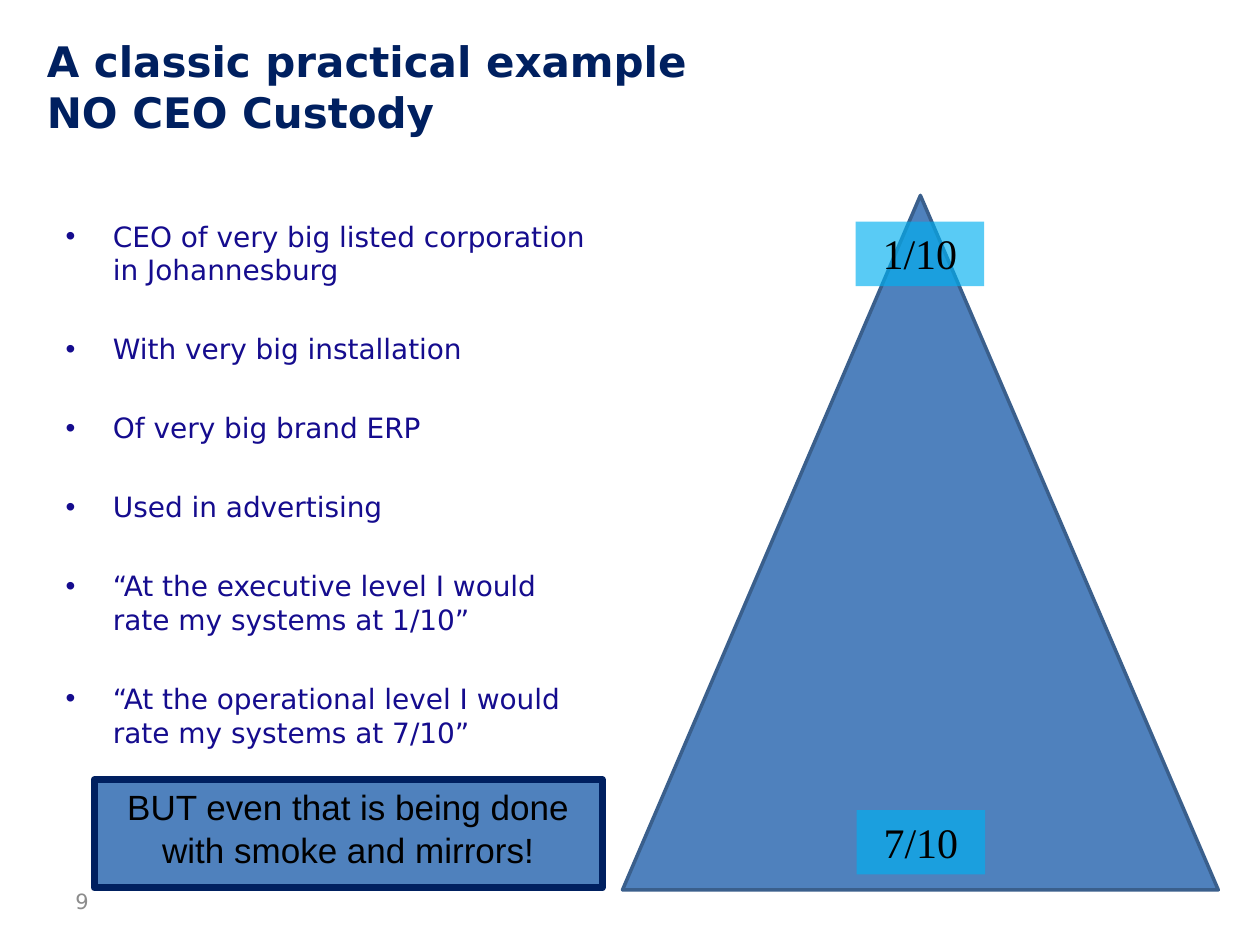
"""Build a slide on how a CEO and the operational level rate the same systems."""
from dataclasses import dataclass
from typing import Optional

import lxml.etree
import pptx
import pptx.dml.color
import pptx.enum.shapes
import pptx.enum.text
import pptx.oxml.ns
import pptx.util

Cm, Pt = pptx.util.Cm, pptx.util.Pt
SHAPE = pptx.enum.shapes.MSO_SHAPE
ANCHOR = pptx.enum.text.MSO_ANCHOR
ALIGN = pptx.enum.text.PP_ALIGN

COLORS = {
    "navy": "002060",
    "indigo": "150C8E",
    "grey": "8C8C8C",
    "blue": "4F81BD",
    "edge": "3A5F8C",
    "cyan": "00B0F0",
    "black": "000000",
}
BULLETS = [
    "CEO of very big listed corporation in Johannesburg",
    "With very big installation",
    "Of very big brand ERP",
    "Used in advertising",
    "“At the executive level I would rate my systems at 1/10”",
    "“At the operational level I would rate my systems at 7/10”",
]


@dataclass
class Box:
    left: float
    top: float
    width: float
    height: float


@dataclass
class Style:
    font: str
    size: float
    color: str
    bold: bool = False
    align: pptx.enum.text.PP_ALIGN = ALIGN.LEFT
    anchor: pptx.enum.text.MSO_ANCHOR = ANCHOR.TOP
    gap: float = 0


@dataclass
class Block:
    kind: pptx.enum.shapes.MSO_SHAPE
    box: Box
    fill: str
    line: Optional[str] = None
    line_width: float = 0
    opacity: int = 100
    text: str = ""
    style: Optional[Style] = None


RATING = Style("Times New Roman", 24, "black", align=ALIGN.CENTER)
CLAIM = Style("Arial", 20, "black", align=ALIGN.CENTER)
BLOCKS = [
    Block(SHAPE.ISOSCELES_TRIANGLE, Box(12.55, 3.94, 12.01, 14), "blue", "edge", 2),
    Block(SHAPE.RECTANGLE, Box(17.25, 4.47, 2.59, 1.3), "cyan",
          opacity=65, text="1/10", style=RATING),
    Block(SHAPE.RECTANGLE, Box(17.27, 16.33, 2.59, 1.3), "cyan",
          opacity=65, text="7/10", style=RATING),
    Block(SHAPE.RECTANGLE, Box(1.9, 15.72, 10.24, 2.18), "blue", "navy", 4,
          text="BUT even that is being done with smoke and mirrors!", style=CLAIM),
]


def rgb(name: str) -> pptx.dml.color.RGBColor:
    return pptx.dml.color.RGBColor.from_string(COLORS[name])


def place(sp, box: Box) -> None:
    sp.left, sp.top = Cm(box.left), Cm(box.top)
    sp.width, sp.height = Cm(box.width), Cm(box.height)


def write(sp, text: str, style: Style) -> None:
    tf = sp.text_frame
    tf.text = text
    tf.word_wrap = True
    tf.auto_size = pptx.enum.text.MSO_AUTO_SIZE.NONE
    tf.vertical_anchor = style.anchor
    for i, p in enumerate(tf.paragraphs):
        p.alignment = style.align
        p.space_before = Pt(style.gap if i else 0)
        for r in p.runs:
            r.font.name = style.font
            r.font.size = Pt(style.size)
            r.font.bold = style.bold
            r.font.color.rgb = rgb(style.color)


def draw(s, block: Block) -> None:
    sp = s.shapes.add_shape(block.kind, 0, 0, 0, 0)
    place(sp, block.box)
    sp.shadow.inherit = False
    sp.fill.solid()
    sp.fill.fore_color.rgb = rgb(block.fill)
    if block.opacity < 100:
        qn = pptx.oxml.ns.qn
        color = sp.fill._xPr.find(qn("a:solidFill")).find(qn("a:srgbClr"))
        lxml.etree.SubElement(color, qn("a:alpha"), val=str(block.opacity * 1000))
    if block.line:
        sp.line.color.rgb = rgb(block.line)
        sp.line.width = Pt(block.line_width)
    else:
        sp.line.fill.background()
    if block.style:
        write(sp, block.text, block.style)


def main() -> None:
    prs = pptx.Presentation()
    prs.slide_width, prs.slide_height = Cm(25.4), Cm(19.05)
    s = prs.slides.add_slide(prs.slide_layouts[1])

    title, body = s.shapes.title, s.placeholders[1]
    place(title, Box(0.69, 0.15, 22.86, 3.18))
    write(title, "A classic practical example\vNO CEO Custody",
          Style("DejaVu Sans", 24, "navy", bold=True, anchor=ANCHOR.MIDDLE))
    place(body, Box(1.07, 4.29, 11.25, 14.83))
    write(body, "\n".join(BULLETS), Style("DejaVu Sans", 16, "indigo", gap=26))

    number = s.shapes.add_textbox(0, 0, 0, 0)
    place(number, Box(1.27, 17.65, 5.92, 1.02))
    write(number, "9", Style("DejaVu Sans", 12, "grey", anchor=ANCHOR.MIDDLE))

    for block in BLOCKS:
        draw(s, block)
    prs.save("out.pptx")


if __name__ == "__main__":
    main()
